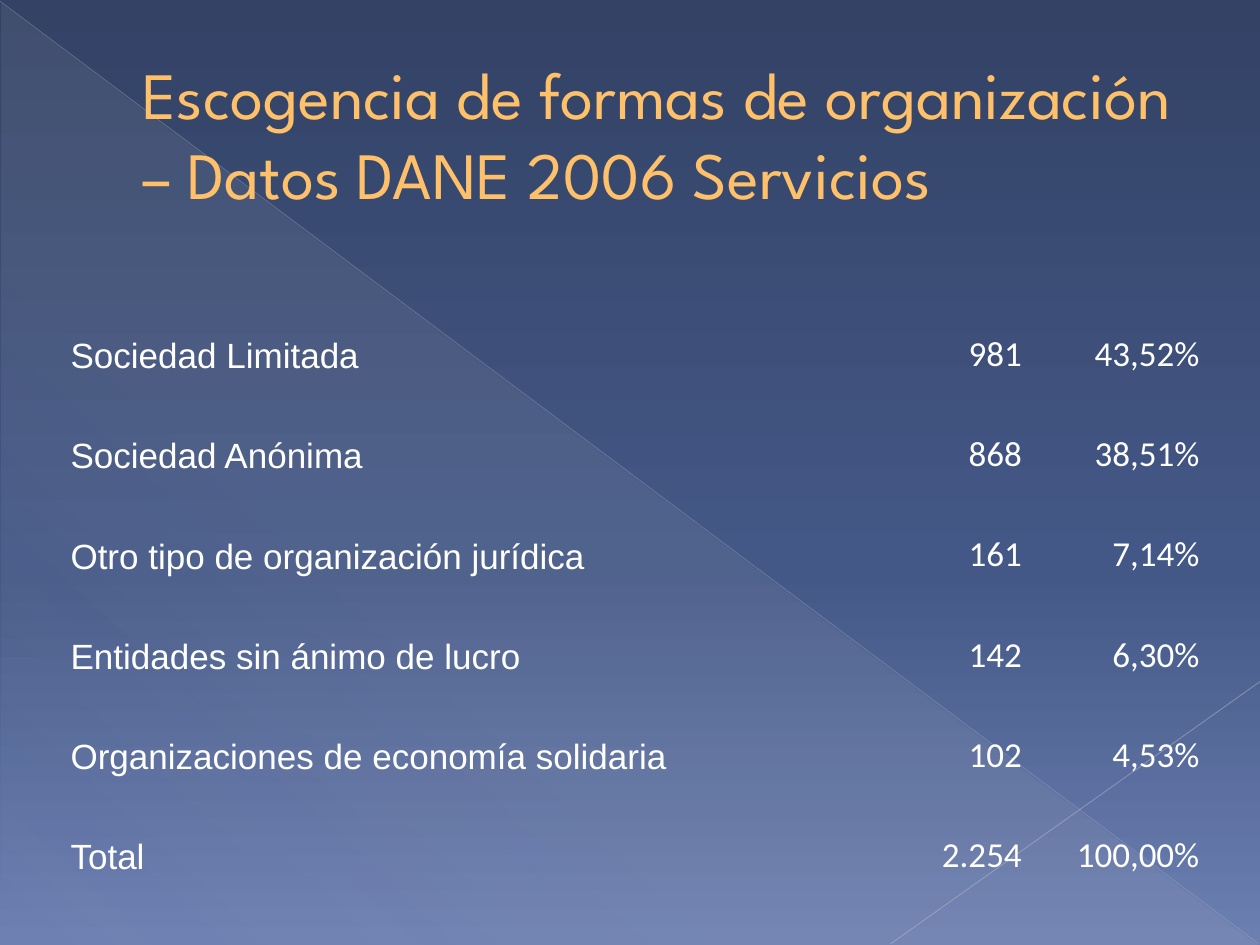
from dataclasses import dataclass
from lxml import etree
from pptx import Presentation
from pptx.dml.color import RGBColor
from pptx.enum.shapes import MSO_CONNECTOR, MSO_SHAPE
from pptx.enum.text import MSO_ANCHOR, PP_ALIGN
from pptx.oxml.ns import qn
from pptx.util import Emu, Inches, Pt

STRAIGHT = MSO_CONNECTOR.STRAIGHT
WEDGE = MSO_SHAPE.RIGHT_TRIANGLE
MIDDLE, BOTTOM = MSO_ANCHOR.MIDDLE, MSO_ANCHOR.BOTTOM
LEFT, RIGHT = PP_ALIGN.LEFT, PP_ALIGN.RIGHT
WIDE, HIGH = Inches(10), Inches(7.5)
PLAIN = "{2D5ABB26-0587-4C30-8999-92F81FD0307C}"
HEX = {
    "night": "334265", "dusk": "445887", "dawn": "6C7FB1",
    "mist": "D4D4D6", "long": "B9BDC8", "short": "C1C4CE",
    "gold": "FFC06A", "edge": "A67800", "white": "FFFFFF",
}


@dataclass
class Stop:
    place: int
    color: str
    alpha: int = 100


@dataclass
class Line:
    start: tuple[float, float]
    end: tuple[float, float]
    color: str
    width: float
    alpha: int


@dataclass
class Column:
    share: float
    font: str
    align: PP_ALIGN


SKY = [Stop(0, "night"), Stop(60, "dusk"), Stop(100, "dawn")]
HAZE = [Stop(0, "mist", 10), Stop(70, "mist", 8), Stop(100, "mist", 1)]
LINES = [
    Line((0, 0.13), (99.9, 99.87), "long", 0.39, 35),
    Line((100, 72.13), (70.7, 99.87), "short", 0.47, 45),
]
COLUMNS = [
    Column(66.1, "Arial", LEFT),
    Column(9.6, "Calibri", RIGHT),
    Column(14.1, "Calibri", RIGHT),
]
ROWS = [
    ("Sociedad Limitada", "981", "43,52%"),
    ("Sociedad Anónima", "868", "38,51%"),
    ("Otro tipo de organización jurídica", "161", "7,14%"),
    ("Entidades sin ánimo de lucro", "142", "6,30%"),
    ("Organizaciones de economía solidaria", "102", "4,53%"),
    ("Total", "2.254", "100,00%"),
]
TITLE = "Escogencia de formas de organización – Datos DANE 2006 Servicios"


def across(share: float) -> Emu:
    return Emu(round(WIDE * share / 100))


def down(share: float) -> Emu:
    return Emu(round(HIGH * share / 100))


def box(x: float, y: float, w: float, h: float) -> tuple:
    return across(x), down(y), across(w), down(h)


def tint(name: str) -> RGBColor:
    return RGBColor.from_string(HEX[name])


def fade(color, alpha: int) -> None:
    etree.SubElement(color, qn("a:alpha"), val=str(alpha * 1000))


def blend(owner, stops: list[Stop], angle: int) -> None:
    owner.fill.gradient()


def paint(root, stops: list[Stop], angle: int) -> None:
    grad = root.find(".//" + qn("a:gradFill"))
    for child in list(grad):
        grad.remove(child)
    group = etree.SubElement(grad, qn("a:gsLst"))
    for stop in stops:
        mark = etree.SubElement(group, qn("a:gs"), pos=str(stop.place * 1000))
        color = etree.SubElement(mark, qn("a:srgbClr"), val=HEX[stop.color])
        fade(color, stop.alpha)
    etree.SubElement(grad, qn("a:lin"), ang=str(angle * 60000), scaled="0")


def write(para, text: str, font: str, size: float, color: str):
    run = para.add_run()
    run.text = text
    run.font.name = font
    run.font.size = Pt(size)
    run.font.color.rgb = tint(color)
    return run


def draw_back(slide) -> None:
    slide.background.fill.gradient()
    paint(slide.element, SKY, 90)
    wedge = slide.shapes.add_shape(WEDGE, *box(0.1, 0.27, 99.8, 99.73))
    wedge.shadow.inherit = False
    wedge.line.fill.background()
    wedge.fill.gradient()
    paint(wedge.element, HAZE, 133)


def draw_line(slide, line: Line) -> None:
    (x1, y1), (x2, y2) = line.start, line.end
    link = slide.shapes.add_connector(
        STRAIGHT, across(x1), down(y1), across(x2), down(y2))
    link.line.color.rgb = tint(line.color)
    link.line.width = Pt(line.width)
    props = link.element.spPr
    fade(props.find(".//" + qn("a:srgbClr")), line.alpha)
    etree.SubElement(props, qn("a:effectLst"))


def draw_title(slide) -> None:
    frame = slide.shapes.add_textbox(*box(5, 3.87, 90, 20.4)).text_frame
    frame.word_wrap = True
    frame.vertical_anchor = MIDDLE
    para = frame.paragraphs[0]
    props = para._p.get_or_add_pPr()
    props.set("marL", str(across(5.3)))
    props.set("indent", "0")
    run = write(para, TITLE, "League Spartan", 37.8, "gold")
    edge = etree.Element(qn("a:ln"), w=str(Pt(0.5)))
    fill = etree.SubElement(edge, qn("a:solidFill"))
    etree.SubElement(fill, qn("a:srgbClr"), val=HEX["edge"])
    run._r.get_or_add_rPr().insert(0, edge)


def draw_table(slide) -> None:
    frame = slide.shapes.add_table(
        len(ROWS), len(COLUMNS), *box(5.5, 29.2, 89.8, 63.6))
    table = frame.table
    table.first_row = table.horz_banding = False
    frame.element.find(".//" + qn("a:tableStyleId")).text = PLAIN
    for slot, column in zip(table.columns, COLUMNS):
        slot.width = across(column.share)
    for r, row in enumerate(ROWS):
        for c, (text, column) in enumerate(zip(row, COLUMNS)):
            cell = table.cell(r, c)
            cell.fill.background()
            cell.vertical_anchor = BOTTOM
            cell.margin_left = cell.margin_right = cell.margin_top = across(0.1)
            cell.margin_bottom = 0
            para = cell.text_frame.paragraphs[0]
            para.alignment = column.align
            write(para, text, column.font, 20, "white")


def main() -> None:
    deck = Presentation()
    deck.slide_width, deck.slide_height = WIDE, HIGH
    slide = deck.slides.add_slide(deck.slide_layouts[6])
    draw_back(slide)
    for line in LINES:
        draw_line(slide, line)
    draw_title(slide)
    draw_table(slide)
    deck.save("out.pptx")


if __name__ == "__main__":
    main()
